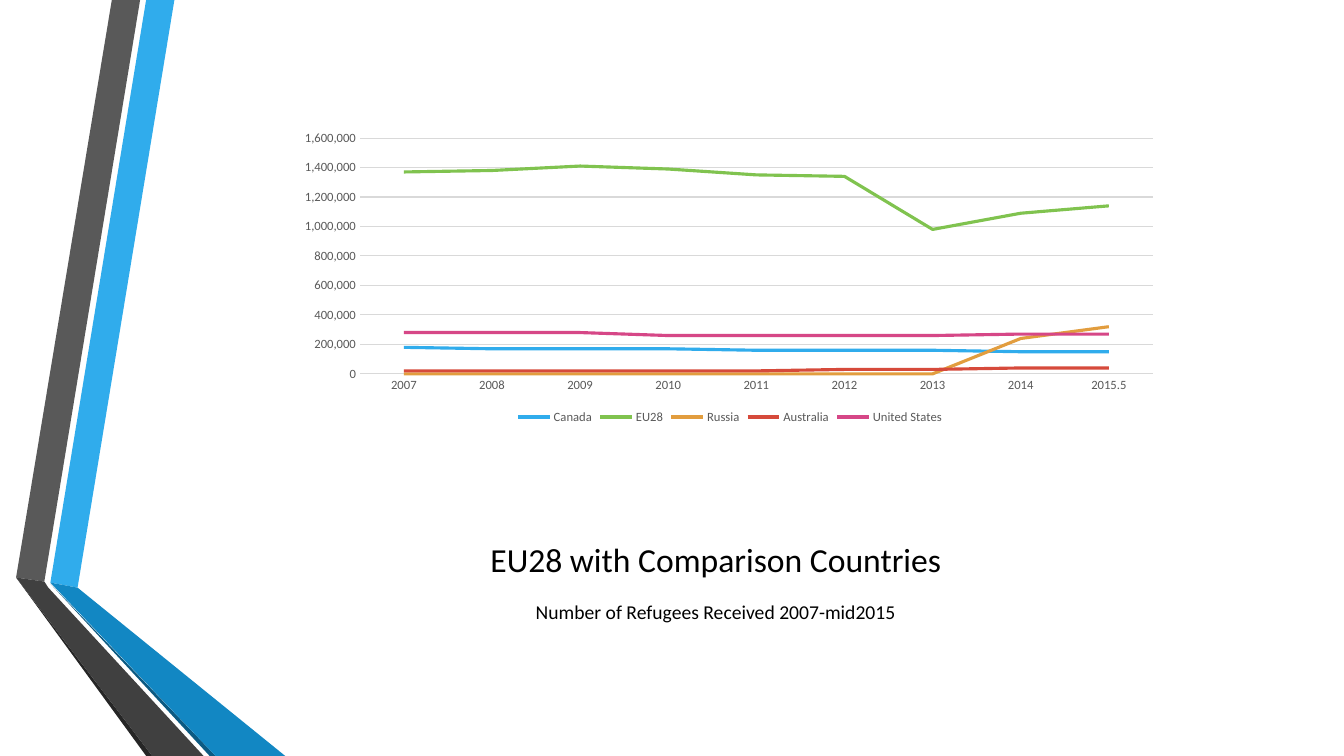
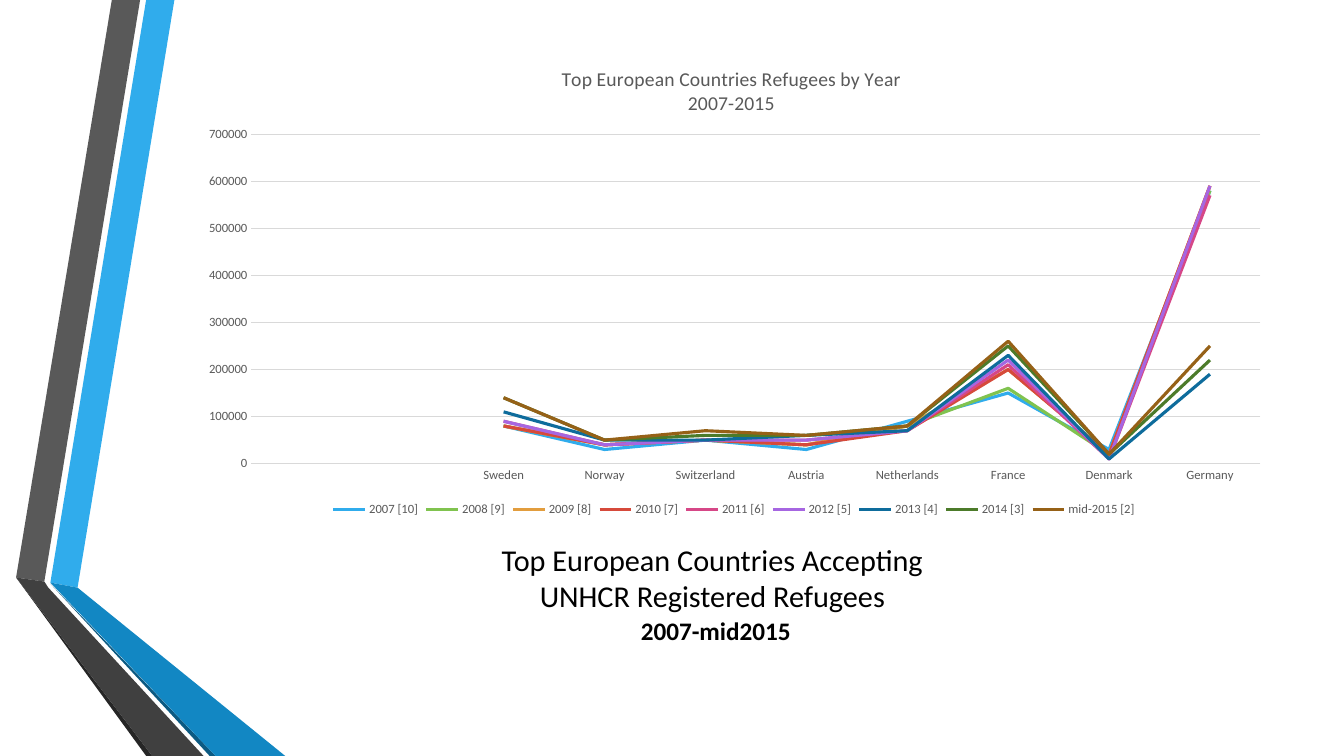
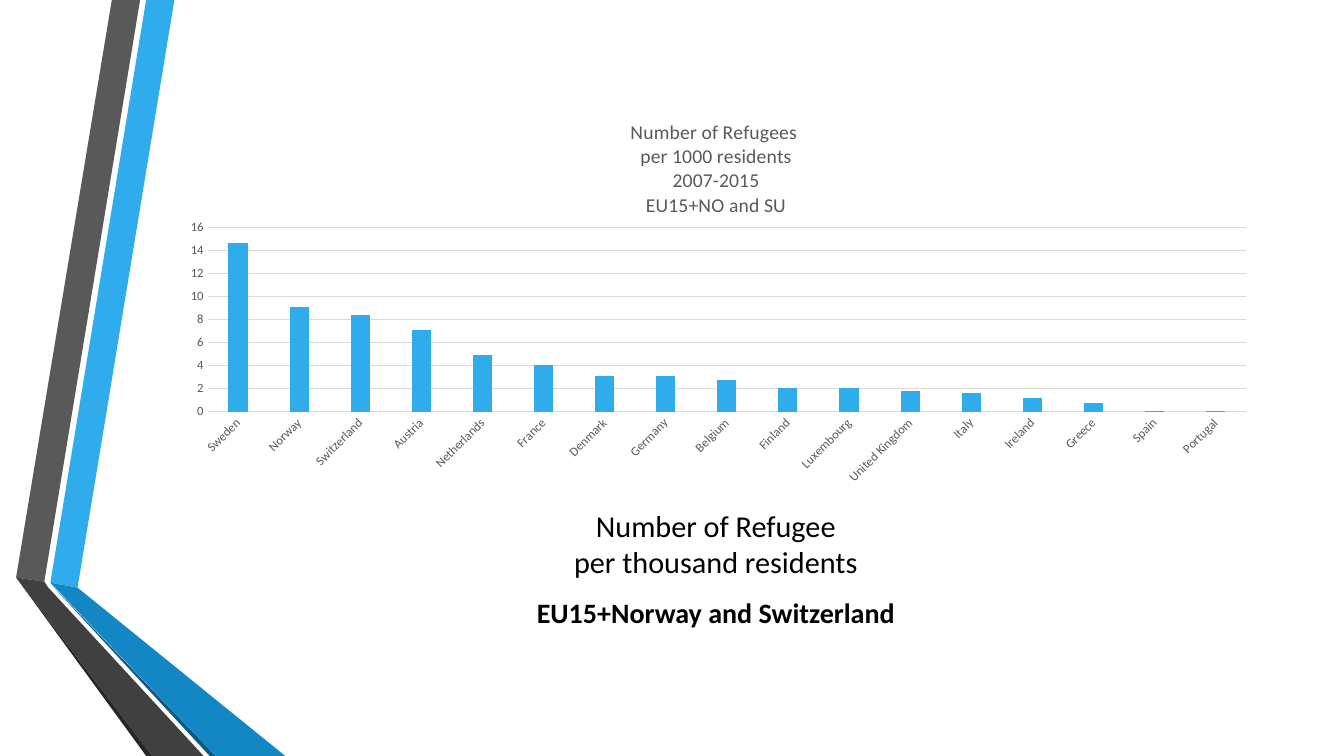
from lxml import etree
from pptx import Presentation
from pptx.chart.data import CategoryChartData
from pptx.dml.color import RGBColor
from pptx.enum.chart import XL_CHART_TYPE, XL_LEGEND_POSITION, XL_TICK_MARK
from pptx.enum.text import MSO_ANCHOR, PP_ALIGN
from pptx.oxml import parse_xml
from pptx.util import Inches, Pt

FONT, BLACK, GREY, RULE = "Calibri", "000000", "595959", "D9D9D9"
SERIES_COLORS = ["30ACEC", "80C34F", "E29D3E", "D64A3B", "D64787",
                 "A666E1", "0E6C9C", "4C7B2A", "966117"]
CHART_NS = "http://schemas.openxmlformats.org/drawingml/2006/chart"
TEXT_LEFT, TEXT_WIDTH, TITLE_TOP, SUBTITLE_TOP = 1.62, 10.96, 5.18, 5.8

# Folded ribbon down the left edge: colour and corner points in inches
RIBBON = [
    ("30ACEC", [(0.5, 5.78), (0.77, 5.83), (1.73, 0), (1.45, 0)]),
    ("595959", [(1.39, 0), (1.11, 0), (0.16, 5.73), (0.44, 5.77)]),
    ("262626", [(0.16, 5.73), (1.45, 7.5), (1.51, 7.5)]),
    ("0C5A82", [(0.5, 5.79), (2.08, 7.5), (2.14, 7.5)]),
    ("1287C3", [(0.5, 5.78), (2.14, 7.5), (2.83, 7.5), (0.77, 5.83)]),
    ("404040", [(2.02, 7.5), (0.48, 5.83), (0.44, 5.77), (0.16, 5.73), (1.51, 7.5)]),
]

# Refugees in thousands, one value per category
BY_REGION = {
    "Canada": [180, 170, 170, 170, 160, 160, 160, 150, 150],
    "EU28": [1370, 1380, 1410, 1390, 1350, 1340, 980, 1090, 1140],
    "Russia": [0, 0, 0, 0, 0, 0, 0, 240, 320],
    "Australia": [20, 20, 20, 20, 20, 30, 30, 40, 40],
    "United States": [280, 280, 280, 260, 260, 260, 260, 270, 270],
}
BY_YEAR = {
    "2007 [10]": [None, None, 80, 30, 50, 30, 90, 150, 30, 580],
    "2008 [9]": [None, None, 80, 40, 50, 40, 80, 160, 20, 580],
    "2009 [8]": [None, None, 80, 40, 50, 40, 80, 200, 20, 590],
    "2010 [7]": [None, None, 80, 40, 50, 40, 70, 200, 20, 590],
    "2011 [6]": [None, None, 90, 40, 50, 50, 70, 210, 10, 570],
    "2012 [5]": [None, None, 90, 40, 50, 50, 70, 220, 10, 590],
    "2013 [4]": [None, None, 110, 50, 50, 60, 70, 230, 10, 190],
    "2014 [3]": [None, None, 140, 50, 60, 60, 80, 250, 20, 220],
    "mid-2015 [2]": [None, None, 140, 50, 70, 60, 80, 260, 20, 250],
}
PER_THOUSAND = {
    "Sweden": 14.7, "Norway": 9.1, "Switzerland": 8.4, "Austria": 7.1,
    "Netherlands": 4.9, "France": 4.1, "Denmark": 3.1, "Germany": 3.1,
    "Belgium": 2.8, "Finland": 2.1, "Luxembourg": 2.1, "United Kingdom": 1.8,
    "Italy": 1.6, "Ireland": 1.2, "Greece": 0.8, "Spain": 0.1, "Portugal": 0.1,
}

# title/subtitle: lines, size, box height; plot and heading_at: shares of the chart
SLIDES = [
    dict(title=(["EU28 with Comparison Countries"], 24, 0.62),
         subtitle=("Number of Refugees Received 2007-mid2015", 14, 0.54, False),
         box=(2.87, 1.25, 8.74, 3), plot=(0.08, 0.04, 0.9, 0.78),
         kind=XL_CHART_TYPE.LINE, scale=1000, series=BY_REGION,
         cats=[*map(str, range(2007, 2015)), "2015.5"],
         top=1600000, step=200000, fmt="#,##0"),
    dict(title=(["Top European Countries Accepting ", "UNHCR Registered Refugees "], 21.6, 0.96),
         subtitle=("2007-mid2015", 18, 0.91, True),
         box=(1.84, 0.43, 10.88, 4.74), plot=(0.06, 0.19, 0.92, 0.69),
         kind=XL_CHART_TYPE.LINE, scale=1000, series=BY_YEAR,
         cats=["", "", "Sweden", "Norway", "Switzerland", "Austria",
               "Netherlands", "France", "Denmark", "Germany"],
         top=700000, step=100000, fmt="General",
         heading=["Top European Countries Refugees by Year", "2007-2015"],
         heading_at=(0.34, 0.04)),
    dict(title=(["Number of Refugee", "per thousand residents"], 21.6, 0.62),
         subtitle=("EU15+Norway and Switzerland", 20, 0.54, True),
         box=(1.62, 0.91, 10.96, 3.97), plot=(0.04, 0.34, 0.94, 0.46),
         kind=XL_CHART_TYPE.COLUMN_CLUSTERED, scale=1,
         series={"Series 1": list(PER_THOUSAND.values())}, cats=list(PER_THOUSAND),
         top=16, step=2, fmt="General",
         heading=["Number of Refugees ", "per 1000 residents", "2007-2015", "EU15+NO and SU"],
         heading_at=(0.42, 0.06)),
]


def rgb(value):
    return RGBColor.from_string(value)


def style(font, size, color, bold=False):
    font.name, font.size, font.bold = FONT, Pt(size), bold
    font.color.rgb = rgb(color)


def draw_ribbon(s):
    for color, points in RIBBON:
        corners = [(Inches(x), Inches(y)) for x, y in points]
        builder = s.shapes.build_freeform(*corners[0])
        builder.add_line_segments(corners[1:], close=True)
        sp = builder.convert_to_shape()
        sp.shadow.inherit = False
        sp.fill.solid()
        sp.fill.fore_color.rgb = rgb(color)
        sp.line.fill.background()


def add_text(s, top, height, text, size, anchor, bold=False, after=0):
    sp = s.shapes.add_textbox(*map(Inches, (TEXT_LEFT, top, TEXT_WIDTH, height)))
    tf = sp.text_frame
    tf.word_wrap, tf.vertical_anchor = True, anchor
    tf.text = text
    for p in tf.paragraphs:
        p.alignment, p.space_after = PP_ALIGN.CENTER, Pt(after)
        for r in p.runs:
            style(r.font, size, BLACK, bold)


def place(parent, shares, inner=False):
    """Fix the plot area or heading at shares of the chart's size."""
    for old in parent.findall(f"{{{CHART_NS}}}layout"):
        parent.remove(old)
    layout = parse_xml(f'<c:layout xmlns:c="{CHART_NS}"><c:manualLayout/></c:layout>')
    items = [("layoutTarget", "inner")] if inner else []
    items += [("xMode", "edge"), ("yMode", "edge"), *zip("xywh", shares)]
    for tag, value in items:
        etree.SubElement(layout[0], f"{{{CHART_NS}}}{tag}").set("val", str(value))
    parent.insert(0 if inner else 1, layout)


def add_heading(chart, lines, at):
    tf = chart.chart_title.text_frame
    tf.text = "\n".join(lines)
    for p in tf.paragraphs:
        p.alignment = PP_ALIGN.CENTER
        for r in p.runs:
            style(r.font, 14, GREY)
    place(chart.chart_title._element, at)
    chart.chart_title.include_in_layout = False


def style_axes(chart, top, step, fmt):
    cat, val = chart.category_axis, chart.value_axis
    for axis in (cat, val):
        axis.major_tick_mark = axis.minor_tick_mark = XL_TICK_MARK.NONE
        style(axis.tick_labels.font, 9, GREY)
    val.minimum_scale, val.maximum_scale, val.major_unit = 0, top, step
    val.tick_labels.number_format = fmt
    val.tick_labels.number_format_is_linked = False
    val.format.line.fill.background()
    for line in (cat.format.line, val.major_gridlines.format.line):
        line.color.rgb, line.width = rgb(RULE), Pt(0.75)


def draw_chart(s, spec):
    data = CategoryChartData()
    data.categories = spec["cats"]
    for name, values in spec["series"].items():
        data.add_series(name, [v if v is None else v * spec["scale"] for v in values])
    chart = s.shapes.add_chart(spec["kind"], *map(Inches, spec["box"]), data).chart
    style(chart.font, 10, BLACK)
    style_axes(chart, spec["top"], spec["step"], spec["fmt"])
    place(chart._chartSpace.chart.plotArea, spec["plot"], inner=True)
    chart.has_title = "heading" in spec
    if chart.has_title:
        add_heading(chart, spec["heading"], spec["heading_at"])

    is_line = spec["kind"] == XL_CHART_TYPE.LINE
    plot = chart.plots[0]
    plot.vary_by_categories = False
    for series, color in zip(plot.series, SERIES_COLORS):
        if is_line:
            series.smooth = False
            series.format.line.color.rgb, series.format.line.width = rgb(color), Pt(2.25)
        else:
            series.format.fill.solid()
            series.format.fill.fore_color.rgb = rgb(color)
    chart.has_legend = is_line
    if is_line:
        chart.legend.position = XL_LEGEND_POSITION.BOTTOM
        chart.legend.include_in_layout = False
        style(chart.legend.font, 9, GREY)
    else:
        plot.gap_width, plot.overlap = 219, -27
        # Slant the long row of country names
        chart.category_axis._element.txPr.bodyPr.set("rot", "-2700000")


def main():
    prs = Presentation()
    prs.slide_width, prs.slide_height = Inches(13.33), Inches(7.5)
    for spec in SLIDES:
        s = prs.slides.add_slide(prs.slide_layouts[6])
        draw_ribbon(s)
        lines, size, height = spec["title"]
        add_text(s, TITLE_TOP, height, "\v".join(lines), size, MSO_ANCHOR.BOTTOM)
        text, size, height, bold = spec["subtitle"]
        add_text(s, SUBTITLE_TOP, height, text, size, MSO_ANCHOR.MIDDLE, bold, after=6)
        draw_chart(s, spec)
    prs.save("out.pptx")


if __name__ == "__main__":
    main()
